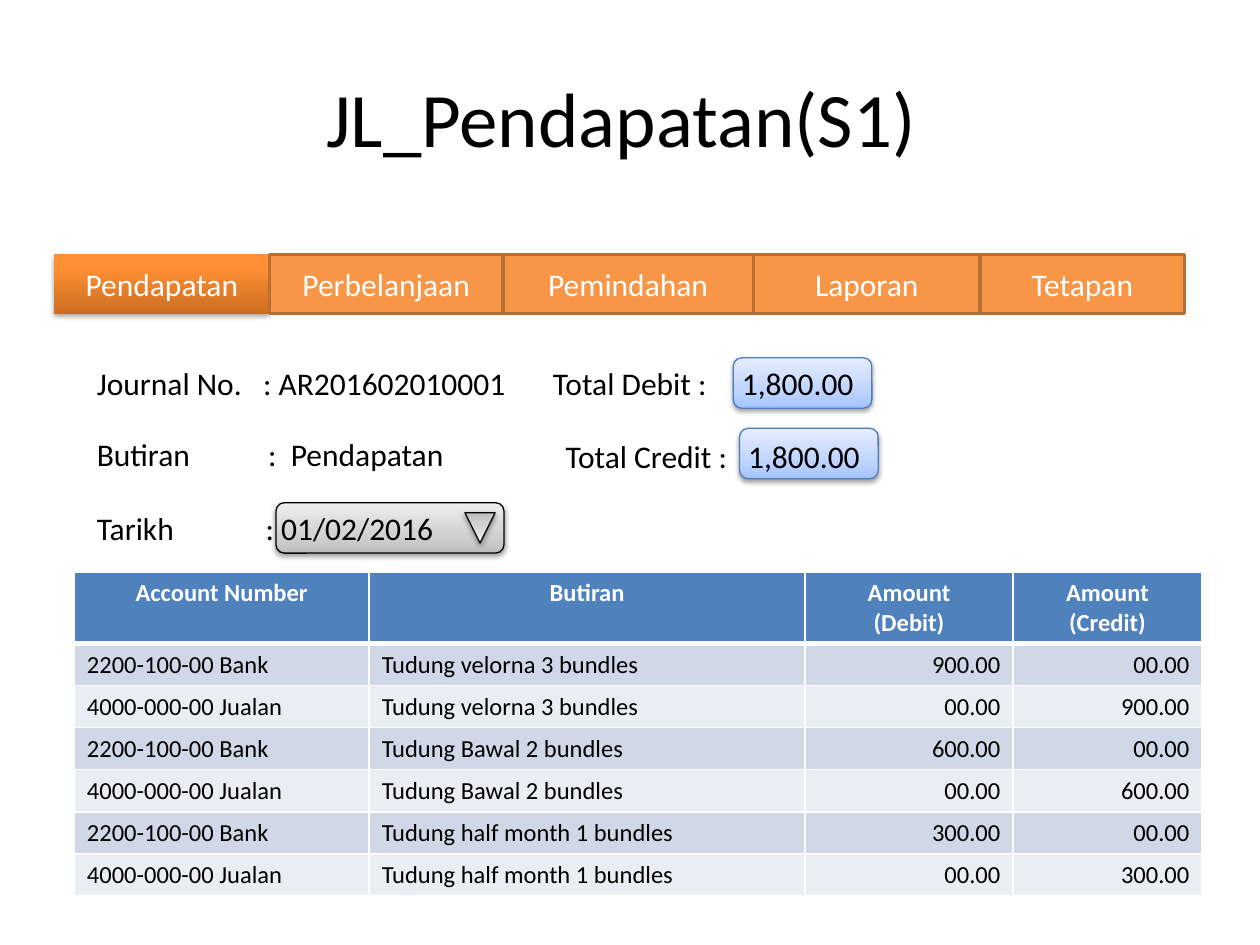
from dataclasses import dataclass

from lxml import etree
from pptx import Presentation
from pptx import util as u
from pptx.dml.color import RGBColor
from pptx.enum import shapes as s
from pptx.enum import text as t
from pptx.oxml import ns


@dataclass(frozen=True)
class Theme:
    font: str = "Calibri"
    black: str = "000000"
    white: str = "FFFFFF"
    tab: str = "F79646"
    tab_line: str = "B76F34"
    field_line: str = "4B7EBC"
    header: str = "4F81BD"
    bands: tuple = ("D0D8E8", "E9EDF4")
    blue: tuple = ((0, "A4C4FF"), (35, "BFD4FF"), (100, "E6EEFF"))
    gray: tuple = ((0, "BDBDBD"), (35, "D1D1D1"), (100, "EEEEEE"))
    orange: tuple = ((0, "CC6E20"), (80, "FF9034"), (100, "FF9136"))
    title_size: int = 44
    body_size: int = 18
    table_size: int = 14


THEME = Theme()


def add_xml(parent, tag, **attributes):
    element = etree.SubElement(parent, ns.qn(tag))
    for name, value in attributes.items():
        element.set(name, str(value))
    return element


def write_text(frame, text, size=THEME.body_size, color=THEME.black, bold=False,
               align=t.PP_ALIGN.LEFT, anchor=None, stops=()):
    frame.text = text
    if anchor is not None:
        frame.vertical_anchor = anchor
    for paragraph in frame.paragraphs:
        paragraph.alignment = align
        if stops:
            tab_list = add_xml(paragraph._p.get_or_add_pPr(), "a:tabLst")
            for stop in stops:
                add_xml(tab_list, "a:tab", pos=u.Inches(stop), algn="l")
        for run in paragraph.runs:
            run.font.name = THEME.font
            run.font.size = u.Pt(size)
            run.font.bold = bold
            run.font.color.rgb = RGBColor.from_string(color)


def add_box(container, kind, left, top, width, height, fill, line=None, line_width=0.75):
    shape = container.add_shape(kind, *map(u.Inches, (left, top, width, height)))
    shape.shadow.inherit = False
    if isinstance(fill, str):
        shape.fill.solid()
        shape.fill.fore_color.rgb = RGBColor.from_string(fill)
    else:
        shape.fill.gradient()
        shape.fill.gradient_angle = 90
        stop_list = shape._element.spPr.find(".//" + ns.qn("a:gsLst"))
        for stop in list(stop_list):
            stop_list.remove(stop)
        for position, color in fill:
            add_xml(add_xml(stop_list, "a:gs", pos=position * 1000), "a:srgbClr", val=color)
    if line:
        shape.line.color.rgb = RGBColor.from_string(line)
        shape.line.width = u.Pt(line_width)
    else:
        shape.line.fill.background()
    return shape


def add_shadow(shape, opacity=38):
    effects = shape._element.spPr.find(ns.qn("a:effectLst"))
    shadow = add_xml(effects, "a:outerShdw", blurRad=u.Pt(3.1), dist=u.Pt(1.6),
                     dir=5400000, rotWithShape=0)
    color = add_xml(shadow, "a:srgbClr", val=THEME.black)
    add_xml(color, "a:alpha", val=opacity * 1000)


def add_field(slide, left, top, width, fill, line):
    shape = add_box(slide.shapes, s.MSO_SHAPE.ROUNDED_RECTANGLE, left, top, width, 0.4, fill, line)
    add_shadow(shape)


def add_line_of_text(slide, left, top, width, text, stops):
    box = slide.shapes.add_textbox(*map(u.Inches, (left, top, width, 0.4)))
    box.text_frame.word_wrap = True
    write_text(box.text_frame, text, stops=stops)


def add_menu(slide, left, top, entries):
    group = slide.shapes.add_group_shape()
    for index, (label, width) in enumerate(entries):
        active = index == 0
        shape = add_box(group.shapes, s.MSO_SHAPE.RECTANGLE, left, top, width, 0.47,
                        THEME.orange if active else THEME.tab,
                        None if active else THEME.tab_line, 2)
        if active:
            add_shadow(shape, 35)
        write_text(shape.text_frame, label, color=THEME.white,
                   align=t.PP_ALIGN.CENTER, anchor=t.MSO_ANCHOR.MIDDLE)
        left += width


def add_border(cell, side, width):
    line = add_xml(cell._tc.get_or_add_tcPr(), f"a:ln{side}", w=u.Pt(width))
    add_xml(add_xml(line, "a:solidFill"), "a:srgbClr", val=THEME.white)


def add_journal_table(slide, left, top, widths, rows):
    heights = [0.56] + [0.33] * (len(rows) - 1)
    table = slide.shapes.add_table(len(rows), len(widths), u.Inches(left), u.Inches(top),
                                   u.Inches(sum(widths)), u.Inches(sum(heights))).table
    for column, width in zip(table.columns, widths):
        column.width = u.Inches(width)
    for index, (values, height) in enumerate(zip(rows, heights)):
        table.rows[index].height = u.Inches(height)
        header = index == 0
        for column, value in enumerate(values):
            cell = table.cell(index, column)
            for side, width in zip("LRTB", (1, 1, 3 if index == 1 else 1, 3 if header else 1)):
                add_border(cell, side, width)
            cell.fill.solid()
            cell.fill.fore_color.rgb = RGBColor.from_string(
                THEME.header if header else THEME.bands[(index - 1) % 2])
            body_align = t.PP_ALIGN.RIGHT if column > 1 else t.PP_ALIGN.LEFT
            write_text(cell.text_frame, value, size=THEME.table_size, bold=header,
                       color=THEME.white if header else THEME.black,
                       align=t.PP_ALIGN.CENTER if header else body_align)


def journal_rows():
    rows = [("Account Number", "Butiran", "Amount\n(Debit)", "Amount\n(Credit)")]
    for item, amount in (("Tudung velorna 3 bundles", "900.00"),
                         ("Tudung Bawal 2 bundles", "600.00"),
                         ("Tudung half month 1 bundles", "300.00")):
        rows.append(("2200-100-00 Bank", item, amount, "00.00"))
        rows.append(("4000-000-00 Jualan", item, "00.00", amount))
    return rows


def main():
    presentation = Presentation()
    presentation.slide_width, presentation.slide_height = u.Inches(10), u.Inches(7.5)
    slide = presentation.slides.add_slide(presentation.slide_layouts[5])

    title = slide.shapes.title
    title.left, title.top, title.width, title.height = map(u.Inches, (0.5, 0.3, 9, 1.25))
    write_text(title.text_frame, "JL_Pendapatan(S1) ", size=THEME.title_size,
               align=t.PP_ALIGN.CENTER, anchor=t.MSO_ANCHOR.MIDDLE)

    add_field(slide, 5.82, 2.84, 1.1, THEME.blue, THEME.field_line)
    add_field(slide, 5.87, 3.4, 1.1, THEME.blue, THEME.field_line)
    add_field(slide, 2.19, 3.99, 1.81, THEME.gray, THEME.black)

    for left, top, width, text, stops in (
            (0.67, 2.84, 3.48, "Journal No.\t: AR201602010001", (1.32,)),
            (0.67, 3.4, 3, "Butiran\t:\tPendapatan", (1.36, 1.54)),
            (0.67, 3.99, 2.92, "Tarikh\t: 01/02/2016", (1.34,)),
            (4.29, 2.84, 2.62, "Total Debit :\t1,800.00", (1.5,)),
            (4.39, 3.42, 3.23, "Total Credit :\t1,800.00", (1.45,))):
        add_line_of_text(slide, left, top, width, text, stops)

    add_journal_table(slide, 0.59, 4.54, (2.34, 3.46, 1.65, 1.5), journal_rows())

    arrow = add_box(slide.shapes, s.MSO_SHAPE.ISOSCELES_TRIANGLE, 3.69, 4.07, 0.24, 0.24,
                    THEME.gray, THEME.black)
    arrow.rotation = 180
    add_shadow(arrow)

    add_menu(slide, 0.43, 2.02, (("Pendapatan", 1.71), ("Perbelanjaan", 1.85),
                                 ("Pemindahan", 1.99), ("Laporan", 1.8), ("Tetapan", 1.62)))
    presentation.save("out.pptx")


if __name__ == "__main__":
    main()
